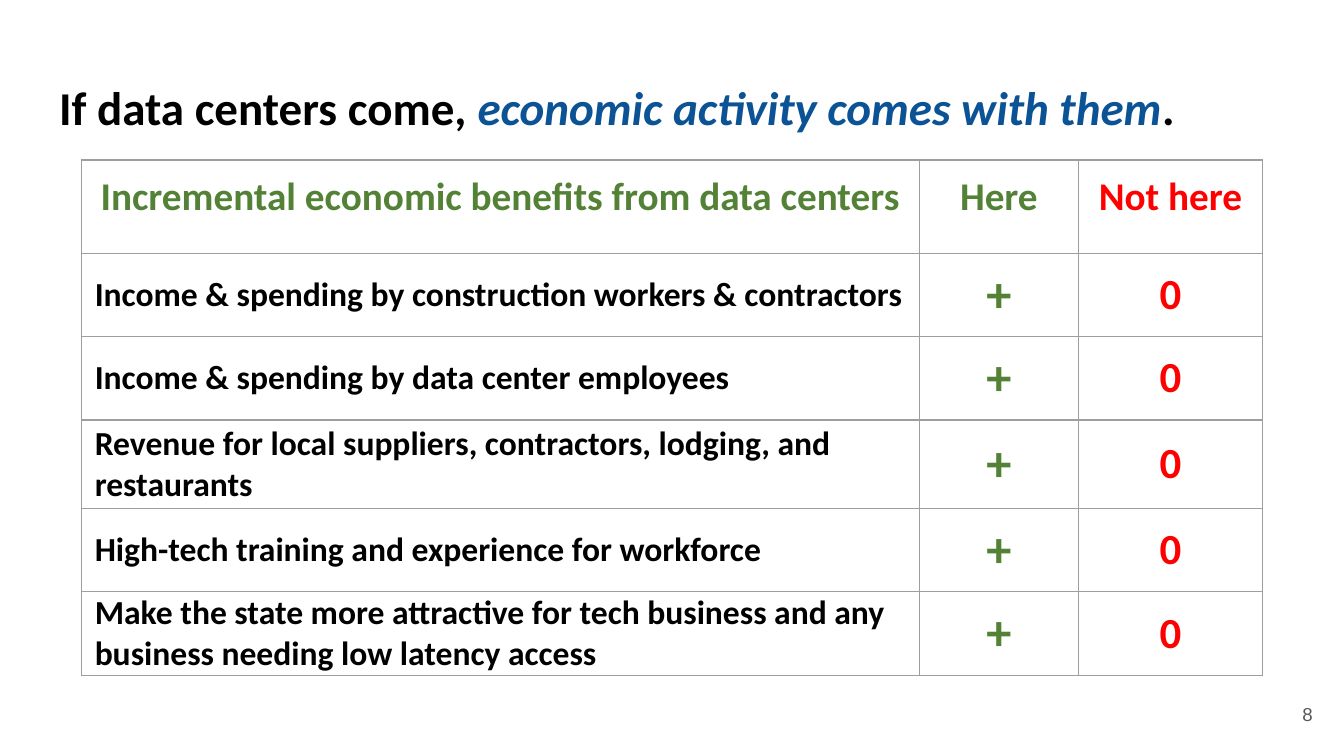
"""Build a slide with a table of economic benefits from data centers."""
from lxml.etree import SubElement
from pptx import Presentation
from pptx.dml.color import RGBColor
from pptx.enum.text import MSO_ANCHOR, MSO_AUTO_SIZE, PP_ALIGN
from pptx.oxml.ns import qn
from pptx.util import Emu, Pt

BLACK, GREEN, RED, BLUE, GRAY, BORDER = "000000", "538135", "FF0000", "0B5394", "595959", "9E9E9E"

TITLE = [
    ("If data centers come, ", BLACK, False),
    ("economic activity comes with them", BLUE, True),
    (".", BLACK, False),
]
HEADERS = ["Incremental economic benefits from data centers", "Here", "Not here"]
BENEFITS = [
    "Income & spending by construction workers & contractors",
    "Income & spending by data center employees",
    "Revenue for local suppliers, contractors, lodging, and restaurants",
    "High-tech training and experience for workforce",
    "Make the state more attractive for tech business and any business needing low latency access",
]
EFFECTS = ["+", "0"]
PAGE_NUMBER = "8"

EMU_PER_PX = 4572
SLIDE_SIZE = (2000, 1125)
TITLE_BOX = (68, 97, 1864, 125)
TABLE_ORIGIN = (121, 238)
COLUMN_WIDTHS = [1247, 237, 274]
ROW_HEIGHTS = [139, 124, 124, 132, 124, 124]
NUMBER_BOX = (1853, 1020, 120, 86)
INSET = 20

HEADER_STYLES = [
    {"size": 21, "color": color, "align": PP_ALIGN.CENTER} for color in (GREEN, GREEN, RED)
]
BODY_STYLES = [
    {"size": 18, "color": BLACK, "align": PP_ALIGN.LEFT},
    {"size": 27, "color": GREEN, "align": PP_ALIGN.CENTER},
    {"size": 23, "color": RED, "align": PP_ALIGN.CENTER},
]


def px(length):
    return Emu(length * EMU_PER_PX)


def rgb(color):
    return RGBColor.from_string(color)


def set_attributes(target, values):
    for name, value in values.items():
        setattr(target, name, value)


def place(shape, box):
    set_attributes(shape, dict(zip(("left", "top", "width", "height"), map(px, box))))


def set_insets(target, vertical):
    set_attributes(target, {
        "margin_left": px(INSET), "margin_right": px(INSET),
        "margin_top": px(vertical), "margin_bottom": px(vertical),
    })


def add_run(paragraph, text, size, color, name="Calibri", bold=True, italic=False):
    run = paragraph.add_run()
    run.text = text
    set_attributes(run.font, {"name": name, "size": Pt(size), "bold": bold, "italic": italic})
    run.font.color.rgb = rgb(color)


def format_frame(frame, anchor):
    set_insets(frame, INSET)
    set_attributes(frame, {
        "word_wrap": True, "auto_size": MSO_AUTO_SIZE.NONE, "vertical_anchor": anchor,
    })


def add_borders(cell):
    properties = cell._tc.get_or_add_tcPr()
    for position, side in enumerate(("lnL", "lnR", "lnT", "lnB")):
        line = properties.makeelement(qn(f"a:{side}"), {"w": str(Pt(0.75))})
        fill = SubElement(line, qn("a:solidFill"))
        SubElement(fill, qn("a:srgbClr"), val=BORDER)
        properties.insert(position, line)


def fill_cell(cell, text, style, is_header):
    cell.fill.background()
    add_borders(cell)
    set_insets(cell, INSET if is_header else 0)
    cell.vertical_anchor = MSO_ANCHOR.TOP if is_header else MSO_ANCHOR.MIDDLE
    paragraph = cell.text_frame.paragraphs[0]
    paragraph.alignment = style["align"]
    add_run(paragraph, text, style["size"], style["color"])


def add_title(slide):
    title = slide.shapes.title
    place(title, TITLE_BOX)
    format_frame(title.text_frame, MSO_ANCHOR.TOP)
    paragraph = title.text_frame.paragraphs[0]
    paragraph.alignment = PP_ALIGN.LEFT
    for text, color, italic in TITLE:
        add_run(paragraph, text, 25.2, color, italic=italic)


def add_benefits_table(slide):
    rows = [HEADERS] + [[benefit] + EFFECTS for benefit in BENEFITS]
    box = (*TABLE_ORIGIN, sum(COLUMN_WIDTHS), sum(ROW_HEIGHTS))
    table = slide.shapes.add_table(len(rows), len(HEADERS), *map(px, box)).table
    set_attributes(table, {"first_row": False, "horz_banding": False})
    for column, width in zip(table.columns, COLUMN_WIDTHS):
        column.width = px(width)
    for index, (row, height, texts) in enumerate(zip(table.rows, ROW_HEIGHTS, rows)):
        row.height = px(height)
        is_header = index == 0
        styles = HEADER_STYLES if is_header else BODY_STYLES
        for cell, text, style in zip(row.cells, texts, styles):
            fill_cell(cell, text, style, is_header)


def add_page_number(slide):
    number = slide.shapes.add_textbox(*map(px, NUMBER_BOX))
    format_frame(number.text_frame, MSO_ANCHOR.MIDDLE)
    paragraph = number.text_frame.paragraphs[0]
    paragraph.alignment = PP_ALIGN.RIGHT
    add_run(paragraph, PAGE_NUMBER, 10, GRAY, name="Arial", bold=False)


def main():
    presentation = Presentation()
    presentation.slide_width, presentation.slide_height = map(px, SLIDE_SIZE)
    slide = presentation.slides.add_slide(presentation.slide_layouts.get_by_name("Title Only"))
    add_title(slide)
    add_benefits_table(slide)
    add_page_number(slide)
    presentation.save("out.pptx")


if __name__ == "__main__":
    main()
